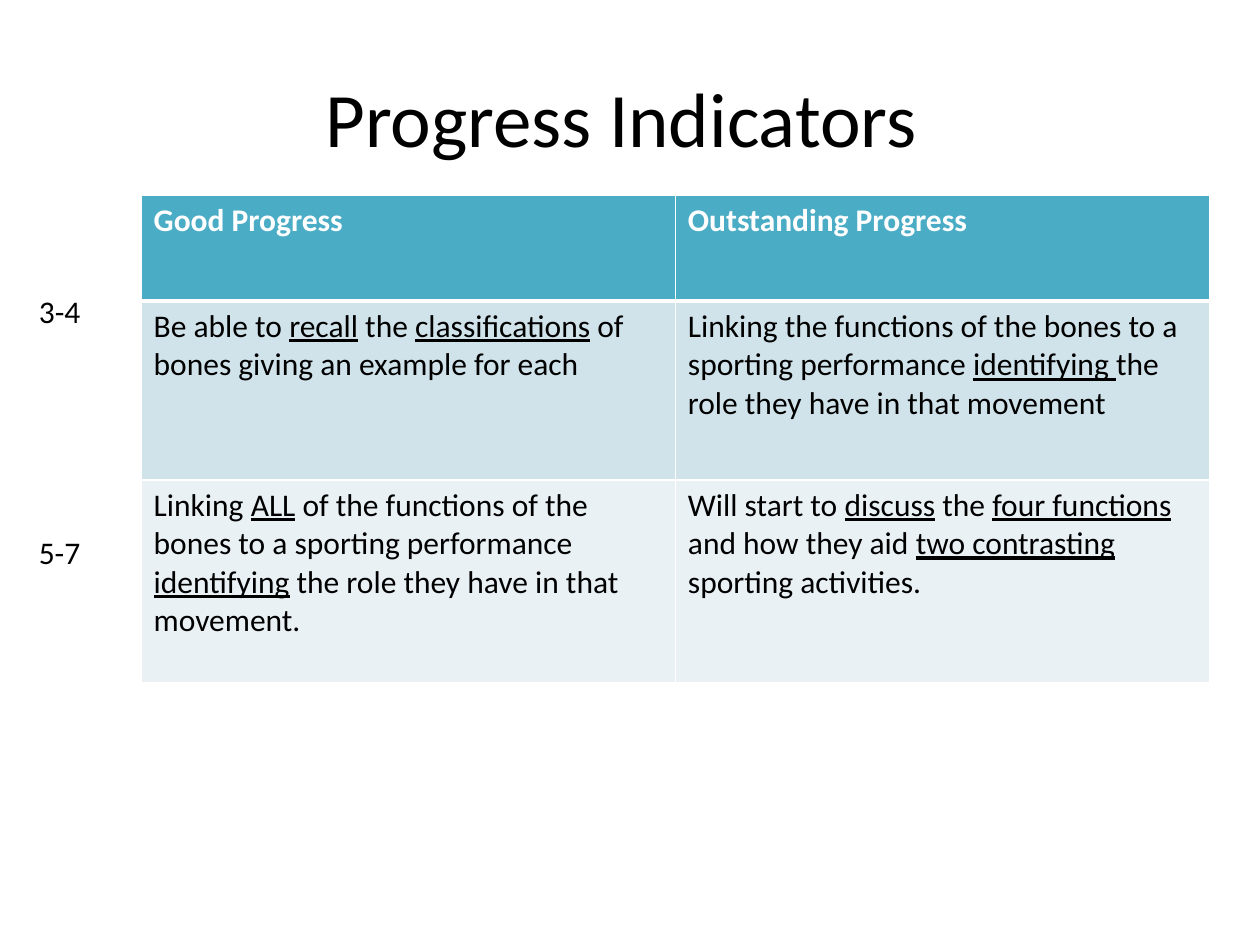
import pptx
import pptx.util
import pptx.dml.color
import pptx.enum.text
import lxml.etree
from dataclasses import dataclass

Inches = pptx.util.Inches
Pt = pptx.util.Pt
Align = pptx.enum.text.PP_ALIGN
Anchor = pptx.enum.text.MSO_ANCHOR

TITLE = "Progress Indicators "
ROWS = [
    ["Good Progress", "Outstanding Progress"],
    ["Be able to _recall_ the _classifications_ of bones giving an example for each",
     "Linking the functions of the bones to a sporting performance "
     "_identifying _the role they have in that movement"],
    ["Linking _ALL_ of the functions of the bones to a sporting performance "
     "_identifying_ the role they have in that movement.",
     "Will start to _discuss_ the _four functions _and how they aid "
     "_two contrasting _sporting activities."],
]
GRADES = [("3-4", 2.27, 0.79), ("5-7", 4.18, 0.67)]
HEIGHTS = [0.84, 1.42, 1.61]
WIDTH = 4.24


@dataclass
class Theme:
    font: str = "Calibri"
    head: int = 44
    body: int = 18
    ink: str = "000000"
    white: str = "FFFFFF"
    fills: tuple = ("4BACC6", "D0E3EA", "E9F1F5")
    thin: int = 1
    thick: int = 3


theme = Theme()


def color(code):
    return pptx.dml.color.RGBColor.from_string(code)


def write(frame, text, size=theme.body, ink=theme.ink, bold=False, align=Align.LEFT):
    frame.word_wrap = True
    para = frame.paragraphs[0]
    para.alignment = align
    for i, part in enumerate(text.split("_")):
        if part:
            run = para.add_run()
            run.text = part
            font = run.font
            font.name, font.size, font.bold = theme.font, Pt(size), bold
            font.underline = i % 2 == 1
            font.color.rgb = color(ink)


def edge(cell, sides):
    props = cell._tc.get_or_add_tcPr()
    for i, (side, width) in enumerate(sides.items()):
        line = pptx.oxml.parse_xml(
            f'<a:{side} xmlns:a="http://schemas.openxmlformats.org/drawingml/2006/main" '
            f'w="{Pt(width)}"><a:solidFill><a:srgbClr val="{theme.white}"/>'
            f'</a:solidFill></a:{side}>')
        props.insert(i, line)


def main():
    deck = pptx.Presentation()
    deck.slide_width, deck.slide_height = Inches(10), Inches(7.5)
    slide = deck.slides.add_slide(deck.slide_layouts[5])

    title = slide.shapes.title
    title.left, title.top = Inches(0.5), Inches(0.3)
    title.width, title.height = Inches(9), Inches(1.25)
    title.text_frame.vertical_anchor = Anchor.MIDDLE
    write(title.text_frame, TITLE, size=theme.head, align=Align.CENTER)

    grid = slide.shapes.add_table(
        len(ROWS), len(ROWS[0]), Inches(1.12), Inches(1.55),
        Inches(WIDTH * len(ROWS[0])), Inches(sum(HEIGHTS))).table
    for col in grid.columns:
        col.width = Inches(WIDTH)
    for r, texts in enumerate(ROWS):
        grid.rows[r].height = Inches(HEIGHTS[r])
        top = theme.thick if r == 1 else theme.thin
        base = theme.thick if r == 0 else theme.thin
        for c, text in enumerate(texts):
            cell = grid.cell(r, c)
            cell.fill.solid()
            cell.fill.fore_color.rgb = color(theme.fills[r])
            edge(cell, {"lnL": theme.thin, "lnR": theme.thin, "lnT": top, "lnB": base})
            write(cell.text_frame, text, bold=r == 0,
                  ink=theme.white if r == 0 else theme.ink)

    for text, top, width in GRADES:
        box = slide.shapes.add_textbox(
            Inches(0.21), Inches(top), Inches(width), Inches(0.4))
        write(box.text_frame, text)
        box.text_frame.auto_size = pptx.enum.text.MSO_AUTO_SIZE.SHAPE_TO_FIT_TEXT

    deck.save("out.pptx")


if __name__ == "__main__":
    main()
